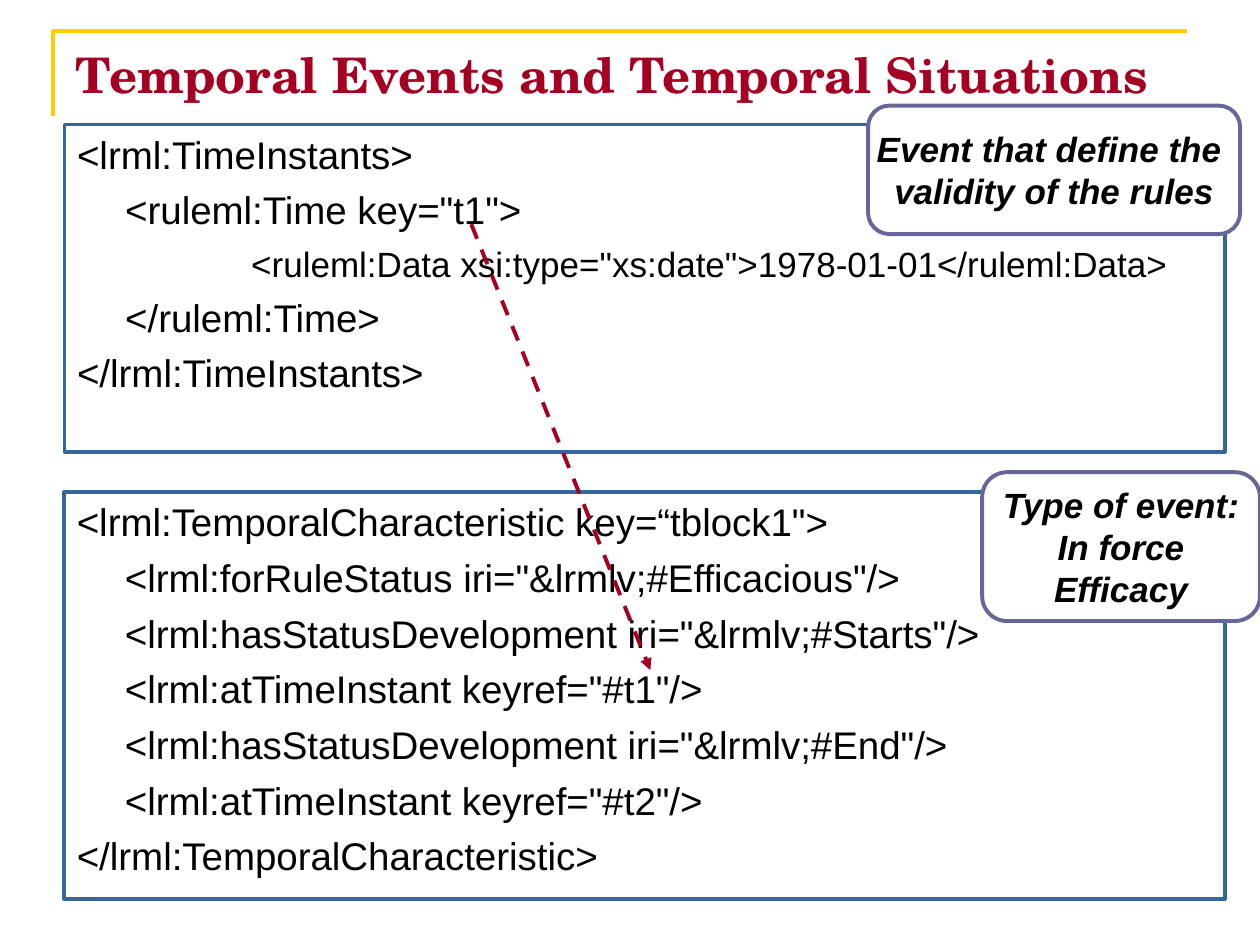
import pptx
import pptx.util
import pptx.dml.color
import pptx.enum.dml
import pptx.enum.shapes
import pptx.enum.text
import pptx.oxml.ns
import lxml.etree

Cm = pptx.util.Cm
Pt = pptx.util.Pt
ANCHOR = pptx.enum.text.MSO_ANCHOR
ALIGN = pptx.enum.text.PP_ALIGN
SHAPE = pptx.enum.shapes.MSO_SHAPE

COLOURS = {
    "rule": "FFCC00",
    "accent": "A50021",
    "panel": "336699",
    "callout": "666699",
    "text": "000000",
    "paper": "FFFFFF",
}
INDENTS = [0, 0.97, 3.51]

INSTANTS = [
    (0, 22, '<lrml:TimeInstants>'),
    (1, 22, '<ruleml:Time key="t1">'),
    (2, 20, '<ruleml:Data xsi:type="xs:date">1978-01-01</ruleml:Data>'),
    (1, 22, '</ruleml:Time>'),
    (0, 22, '</lrml:TimeInstants>'),
]
CHARACTERISTIC = [
    (0, 22, '<lrml:TemporalCharacteristic key=“tblock1">'),
    (1, 22, '<lrml:forRuleStatus iri="&lrmlv;#Efficacious"/>'),
    (1, 22, '<lrml:hasStatusDevelopment iri="&lrmlv;#Starts"/>'),
    (1, 22, '<lrml:atTimeInstant keyref="#t1"/>'),
    (1, 22, '<lrml:hasStatusDevelopment iri="&lrmlv;#End"/>'),
    (1, 22, '<lrml:atTimeInstant keyref="#t2"/>'),
    (0, 22, '</lrml:TemporalCharacteristic>'),
]


def colour(name):
    return pptx.dml.color.RGBColor.from_string(COLOURS[name])


def add_child(parent, tag, **attributes):
    return lxml.etree.SubElement(parent, pptx.oxml.ns.qn(tag), **attributes)


def place(shape, left, top, width, height):
    shape.left, shape.top = Cm(left), Cm(top)
    shape.width, shape.height = Cm(width), Cm(height)


def outline(shape, name):
    shape.line.color.rgb = colour(name)
    shape.line.width = Pt(2.25)


def add_span(para, text, size, font="Arial", name="text", bold=False, italic=False):
    span = para.add_run()
    span.text = text
    span.font.name = font
    span.font.size = Pt(size)
    span.font.bold = bold
    span.font.italic = italic
    span.font.color.rgb = colour(name)


def paragraphs(frame, count):
    return [frame.paragraphs[0]] + [frame.add_paragraph() for _ in range(count - 1)]


def fill_heading(page, left, top, width, height):
    builder = page.shapes.build_freeform(Cm(left), Cm(top + height))
    builder.add_line_segments(
        [(Cm(left), Cm(top)), (Cm(left + width), Cm(top))], close=False
    )
    rule = builder.convert_to_shape()
    rule.shadow.inherit = False
    rule.fill.background()
    outline(rule, "rule")

    title = page.shapes.title
    place(title, left + 0.2, top + 0.13, width, 3.18)
    frame = title.text_frame
    frame.word_wrap = True
    frame.auto_size = pptx.enum.text.MSO_AUTO_SIZE.NONE
    frame.vertical_anchor = ANCHOR.TOP
    para = frame.paragraphs[0]
    para.alignment = ALIGN.LEFT
    add_span(para, "Temporal Events and Temporal Situations", 28,
             font="TeX Gyre Schola", name="accent", bold=True)


def fill_code_panel(panel, lines, left, top, width, height):
    place(panel, left, top, width, height)
    outline(panel, "panel")
    panel.fill.background()
    frame = panel.text_frame
    frame.word_wrap = True
    frame.auto_size = pptx.enum.text.MSO_AUTO_SIZE.NONE
    frame.vertical_anchor = ANCHOR.TOP
    for para, (level, size, text) in zip(paragraphs(frame, len(lines)), lines):
        para.alignment = ALIGN.LEFT
        para.space_before = Pt(5.4)
        properties = para._p.get_or_add_pPr()
        properties.set("marL", str(Cm(INDENTS[level])))
        properties.set("indent", "0")
        add_child(properties, "a:buNone")
        add_span(para, text, size)


def add_callout(page, lines, left, top, width, height):
    callout = page.shapes.add_shape(
        SHAPE.ROUNDED_RECTANGLE, Cm(left), Cm(top), Cm(width), Cm(height)
    )
    callout.shadow.inherit = False
    callout.fill.solid()
    callout.fill.fore_color.rgb = colour("paper")
    outline(callout, "callout")
    frame = callout.text_frame
    frame.word_wrap = False
    frame.vertical_anchor = ANCHOR.MIDDLE
    for para, text in zip(paragraphs(frame, len(lines)), lines):
        para.alignment = ALIGN.CENTER
        add_span(para, text, 20, bold=True, italic=True)


def add_reference_arrow(page, left, top, width, height):
    arrow = page.shapes.add_connector(
        pptx.enum.shapes.MSO_CONNECTOR.STRAIGHT,
        Cm(left), Cm(top), Cm(left + width), Cm(top + height),
    )
    outline(arrow, "accent")
    arrow.line.dash_style = pptx.enum.dml.MSO_LINE.DASH
    add_child(arrow.line._get_or_add_ln(), "a:tailEnd", type="triangle")
    add_child(arrow._element.spPr, "a:effectLst")


def main():
    deck = pptx.Presentation()
    deck.slide_width, deck.slide_height = Cm(25.4), Cm(19.05)
    page = deck.slides.add_slide(deck.slide_layouts[1])

    fill_heading(page, 1.07, 0.63, 22.86, 1.7)
    fill_code_panel(page.placeholders[1], INSTANTS, 1.3, 2.51, 23.39, 6.6)
    panel = page.shapes.add_shape(SHAPE.RECTANGLE, 0, 0, 0, 0)
    panel.shadow.inherit = False
    fill_code_panel(panel, CHARACTERISTIC, 1.3, 9.92, 23.39, 8.2)
    add_reference_arrow(page, 9.5, 4.52, 3.61, 8.99)
    add_callout(page, ["Type of event:", "In force", "Efficacy"],
                19.8, 9.52, 5.6, 3)
    add_callout(page, ["Event that define the ", "validity of the rules"],
                17.5, 2.13, 7.5, 2.59)

    deck.save("out.pptx")


if __name__ == "__main__":
    main()
